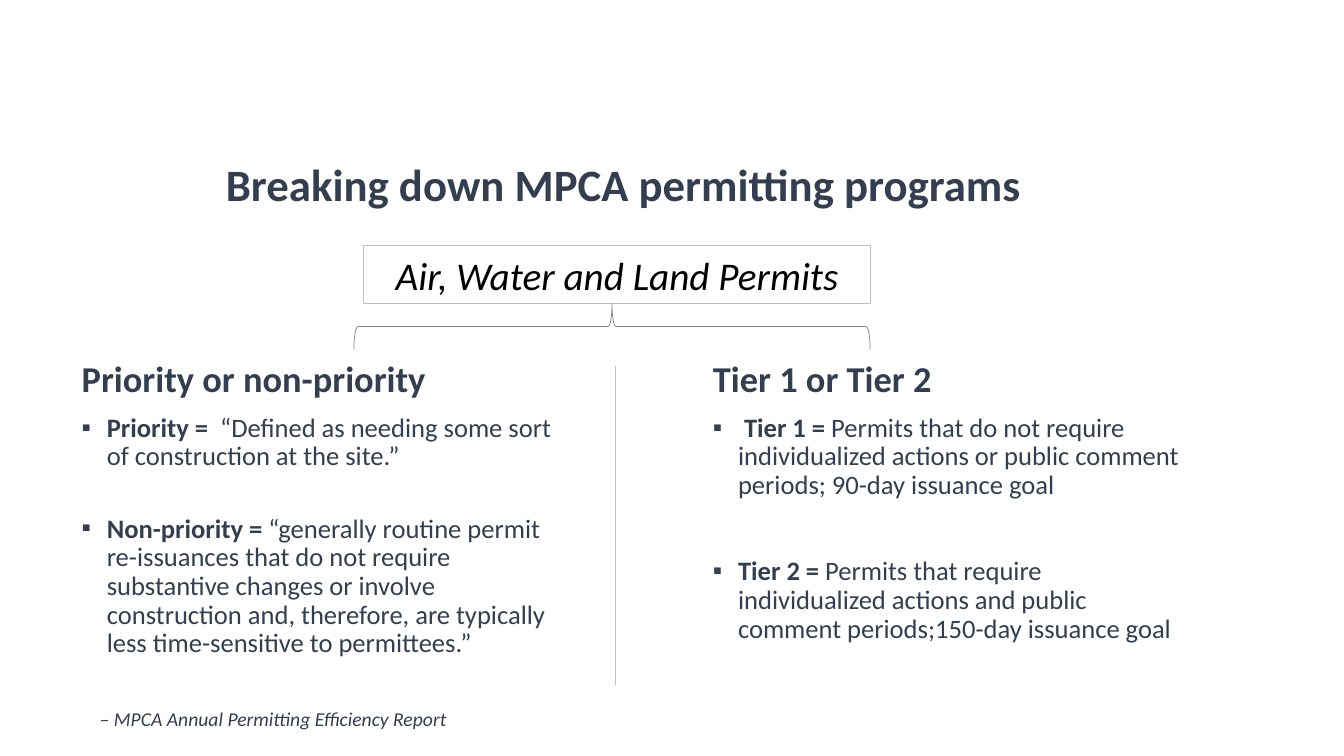
from dataclasses import dataclass

from lxml import etree
from pptx import Presentation
from pptx.dml.color import RGBColor
from pptx.enum import shapes, text
from pptx.oxml import ns
from pptx.util import Inches, Pt


@dataclass(frozen=True)
class Theme:
    font: str = "Calibri"
    ink: str = "333F50"
    black: str = "000000"
    rule: str = "BFBFBF"
    brace: str = "808080"
    title: int = 32
    label: int = 28
    heading: int = 26
    body: int = 19
    source: int = 14
    tight: float = 0.9


class SlideBuilder:
    def __init__(self, prs, theme):
        self.theme = theme
        self.s = prs.slides.add_slide(prs.slide_layouts[3])

    def place(self, sp, box):
        for name, value in zip(("left", "top", "width", "height"), box):
            setattr(sp, name, Inches(value))

    def add_text(self, p, content, size, color=None, **style):
        r = p.add_run()
        r.text = content
        values = {"name": self.theme.font, "size": Pt(size), **style}
        for name, value in values.items():
            setattr(r.font, name, value)
        r.font.color.rgb = RGBColor.from_string(color or self.theme.ink)

    def bullet(self, p, char=None, indent=0):
        """Set the bullet character and hanging indent; no character means no bullet."""
        pPr = p._p.get_or_add_pPr()
        pPr.set("marL", str(Inches(indent)))
        pPr.set("indent", str(-Inches(indent)))
        if char:
            etree.SubElement(pPr, ns.qn("a:buChar")).set("char", char)
        else:
            etree.SubElement(pPr, ns.qn("a:buNone"))

    def outline(self, sp, color, width):
        sp.line.color.rgb = RGBColor.from_string(color)
        sp.line.width = Pt(width)

    def title(self, content, box):
        sp = self.s.shapes.title
        self.place(sp, box)
        tf = sp.text_frame
        tf.auto_size = text.MSO_AUTO_SIZE.NONE
        tf.vertical_anchor = text.MSO_ANCHOR.MIDDLE
        p = tf.paragraphs[0]
        p.alignment = text.PP_ALIGN.LEFT
        p.line_spacing = self.theme.tight
        self.add_text(p, content, self.theme.title, bold=True)

    def column(self, idx, box, heading, items):
        """Fill a body placeholder; each item is (space before, [(text, bold), ...])."""
        sp = self.s.placeholders[idx]
        self.place(sp, box)
        tf = sp.text_frame
        tf.auto_size = text.MSO_AUTO_SIZE.NONE
        p = tf.paragraphs[0]
        self.bullet(p)
        p.line_spacing, p.space_before = self.theme.tight, Pt(0)
        self.add_text(p, heading, self.theme.heading, bold=True)
        for before, runs in items:
            p = tf.add_paragraph()
            self.bullet(p, "▪", 0.25)
            p.line_spacing, p.space_before = self.theme.tight, Pt(before)
            for content, bold in runs:
                self.add_text(p, content, self.theme.body, bold=bold)

    def shape(self, kind, box, color, width, rotation=0):
        sp = self.s.shapes.add_shape(kind, *map(Inches, box))
        sp.rotation = rotation
        sp.shadow.inherit = False
        sp.fill.background()
        self.outline(sp, color, width)
        return sp

    def label(self, content, box):
        sp = self.shape(shapes.MSO_SHAPE.RECTANGLE, box, self.theme.rule, 0.75)
        p = sp.text_frame.paragraphs[0]
        p.alignment = text.PP_ALIGN.CENTER
        self.add_text(p, content, self.theme.label, self.theme.black, italic=True)

    def divider(self, x, top, bottom):
        line = self.s.shapes.add_connector(
            shapes.MSO_CONNECTOR.STRAIGHT, *map(Inches, (x, top, x, bottom)))
        self.outline(line, self.theme.rule, 0.5)
        etree.SubElement(line._element.spPr, ns.qn("a:effectLst"))

    def source(self, content, box):
        tf = self.s.shapes.add_textbox(*map(Inches, box)).text_frame
        tf.word_wrap = True
        self.add_text(tf.paragraphs[0], content, self.theme.source, italic=True)


def main():
    prs = Presentation()
    prs.slide_width, prs.slide_height = Inches(13.33), Inches(7.5)
    theme = Theme()
    slide = SlideBuilder(prs, theme)

    slide.title("Breaking down MPCA permitting programs", (2.14, 1.36, 8.85, 1))
    slide.column(1, (0.71, 3.53, 4.91, 3.43), "Priority or non-priority", [
        (10, [("Priority =  ", True),
              ("“Defined as needing some sort of construction at the site.”", False)]),
        (31, [("Non-priority = ", True),
              ("“generally routine permit re-issuances that do not require "
               "substantive changes or involve construction and, therefore, "
               "are typically less time-sensitive to permittees.”", False)]),
    ])
    slide.column(2, (6.97, 3.53, 4.91, 3.17), "Tier 1 or Tier 2", [
        (10, [(" Tier 1 = ", True),
              ("Permits that do not require individualized actions or public "
               "comment periods; 90-day issuance goal", False)]),
        (41, [("Tier 2 = ", True),
              ("Permits that require individualized actions and public "
               "comment periods;150-day issuance goal", False)]),
    ])
    slide.divider(6.1, 3.63, 6.8)
    slide.label("Air, Water and Land Permits", (3.61, 2.44, 5.02, 0.57))
    slide.shape(shapes.MSO_SHAPE.LEFT_BRACE, (5.84, 0.68, 0.46, 5.12),
                theme.brace, 0.5, rotation=90)
    slide.source("– MPCA Annual Permitting Efficiency Report", (0.89, 6.96, 4.12, 0.34))

    prs.save("out.pptx")


if __name__ == "__main__":
    main()
